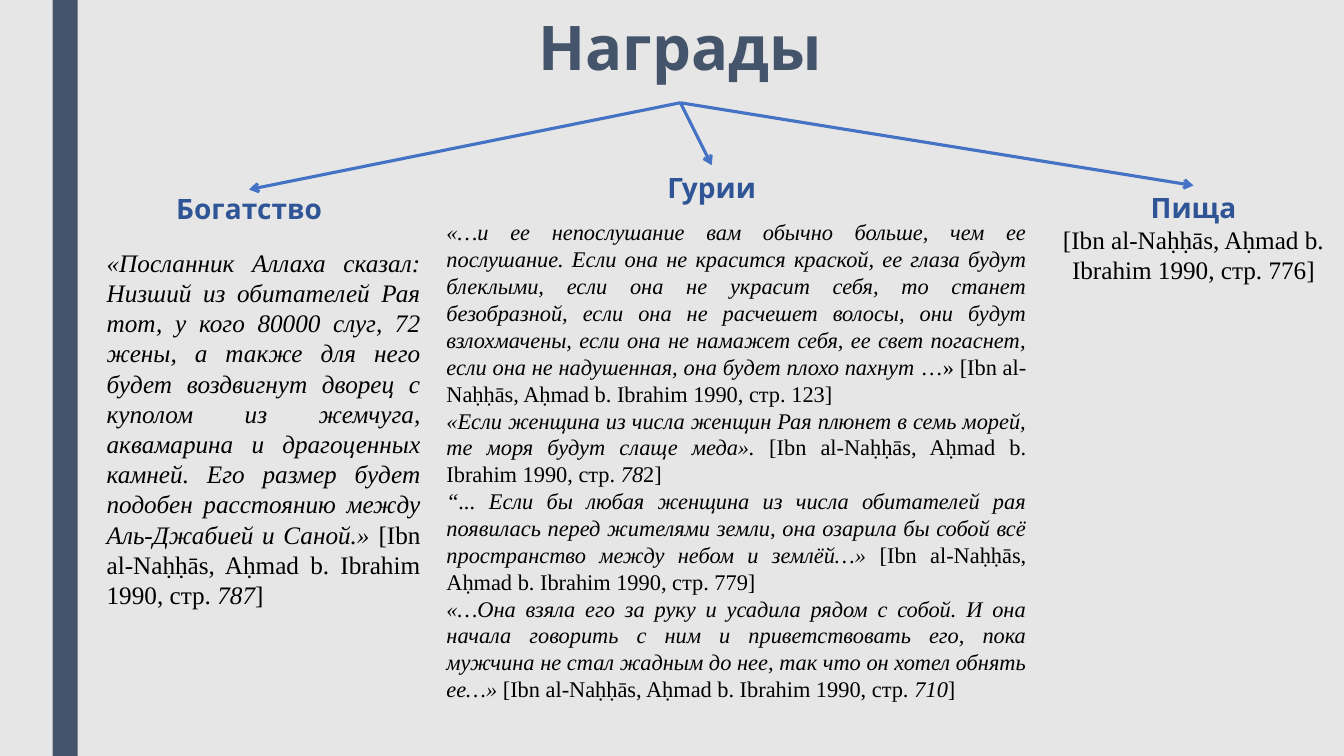
from lxml import etree
from pptx import Presentation
from pptx.dml.color import RGBColor
from pptx.enum.shapes import MSO_CONNECTOR, MSO_SHAPE
from pptx.enum.text import MSO_ANCHOR, PP_ALIGN
from pptx.oxml.ns import qn
from pptx.util import Pt

CENTER, JUSTIFY = PP_ALIGN.CENTER, PP_ALIGN.JUSTIFY
TOP = MSO_ANCHOR.TOP
RECT = MSO_SHAPE.RECTANGLE
STRAIGHT = MSO_CONNECTOR.STRAIGHT

HEAD, BODY = "Karla", "Times New Roman"
SLATE, BLUE, ARROW, GREY = "44546A", "2F5597", "4472C4", "E7E6E6"
CITE = "[Ibn al-Naḥḥās, Aḥmad b. Ibrahim 1990, стр. "

WEALTH = (
    "«Посланник Аллаха сказал: Низший из обитателей Рая тот, у кого 80000 слуг, "
    "72 жены, а также для него будет воздвигнут дворец с куполом из жемчуга, "
    "аквамарина и драгоценных камней. Его размер будет подобен расстоянию между "
    "Аль-Джабией и Саной.» ", CITE, "787", "]")
QUOTES = [
    ("«…и ее непослушание вам обычно больше, чем ее послушание. Если она не "
     "красится краской, ее глаза будут блеклыми, если она не украсит себя, то "
     "станет безобразной, если она не расчешет волосы, они будут взлохмачены, "
     "если она не намажет себя, ее свет погаснет, если она не надушенная, она "
     "будет плохо пахнут", " …» " + CITE + "123]"),
    ("«Если женщина из числа женщин Рая плюнет в семь морей, те моря будут слаще "
     "меда». ", CITE, "78", "2]"),
    ("“... Если бы любая женщина из числа обитателей рая появилась перед жителями "
     "земли, она озарила бы собой всё пространство между небом и землёй…» ",
     CITE + "779]"),
    ("«…Она взяла его за руку и усадила рядом с собой. И она начала говорить с "
     "ним и приветствовать его, пока мужчина не стал жадным до нее, так что он "
     "хотел обнять ее…» ", CITE, "710", "]"),
]


def color(code):
    """Turn a hex string into a colour."""
    return RGBColor.from_string(code)


def add_box(slide, left, top, width, height):
    """Add an empty wrapping text box."""
    box = slide.shapes.add_textbox(Pt(left), Pt(top), Pt(width), Pt(height))
    box.text_frame.word_wrap = True
    box.text_frame.vertical_anchor = TOP
    return box


def write(box, text, size=20, font=HEAD, ink=BLUE, bold=True, italic=False,
          align=CENTER, lines=None, before=None, after=None):
    """Write a paragraph; parts of a tuple alternate italic and upright."""
    frame = box.text_frame
    first = frame.paragraphs[0]
    para = frame.add_paragraph() if first.runs else first
    para.alignment = align
    if lines:
        para.line_spacing = lines
    if before:
        para.space_before = Pt(before)
    if after:
        para.space_after = Pt(after)
    parts = (text,) if isinstance(text, str) else text
    for index, part in enumerate(parts):
        run = para.add_run()
        run.text = part
        run.font.name = font
        run.font.size = Pt(size)
        run.font.bold = bold
        run.font.italic = italic and index % 2 == 0
        run.font.color.rgb = color(ink)


def add_bar(slide, left, width, height):
    """Add the full-height side bar."""
    bar = slide.shapes.add_shape(RECT, Pt(left), 0, Pt(width), height)
    bar.shadow.inherit = False
    bar.fill.solid()
    bar.fill.fore_color.rgb = color(SLATE)
    bar.line.fill.background()


def add_arrow(slide, source, target):
    """Join the bottom of one box to the top of another."""
    arrow = slide.shapes.add_connector(STRAIGHT, 0, 0, 0, 0)
    arrow.begin_connect(source, 2)
    arrow.end_connect(target, 0)
    arrow.line.color.rgb = color(ARROW)
    arrow.line.width = Pt(2.25)
    etree.SubElement(arrow.line._get_or_add_ln(), qn("a:tailEnd"), type="arrow")
    etree.SubElement(arrow._element.spPr, qn("a:effectLst"))


def main():
    """Build the slide and save it."""
    deck = Presentation()
    deck.slide_width, deck.slide_height = Pt(960), Pt(540)
    slide = deck.slides.add_slide(deck.slide_layouts[6])
    slide.background.fill.solid()
    slide.background.fill.fore_color.rgb = color(GREY)
    add_bar(slide, 37.5, 18, deck.slide_height)

    title = add_box(slide, 108, 9.4, 756, 64)
    write(title, "Награды", size=44, ink=SLATE, lines=0.89)
    wealth = add_box(slide, 106.6, 135.4, 142.6, 34.6)
    write(wealth, "Богатство", lines=0.94, before=10, after=2)
    houris = add_box(slide, 412.6, 118, 191.5, 31.5)
    write(houris, "Гурии")
    food = add_box(slide, 745.2, 132.5, 214.6, 75)
    write(food, "Пища")
    write(food, CITE + "776]", size=18, font=BODY, ink="000000", bold=False)
    for target in (wealth, houris, food):
        add_arrow(slide, title, target)

    prose = dict(font=BODY, ink="000000", bold=False, italic=True, align=JUSTIFY)
    quotes = add_box(slide, 311.8, 152.6, 428.4, 395.3)
    for quote in QUOTES:
        write(quotes, quote, size=16, **prose)
    story = add_box(slide, 69.1, 172.8, 238.3, 290.9)
    write(story, WEALTH, size=18, **prose)
    deck.save("out.pptx")


if __name__ == "__main__":
    main()
